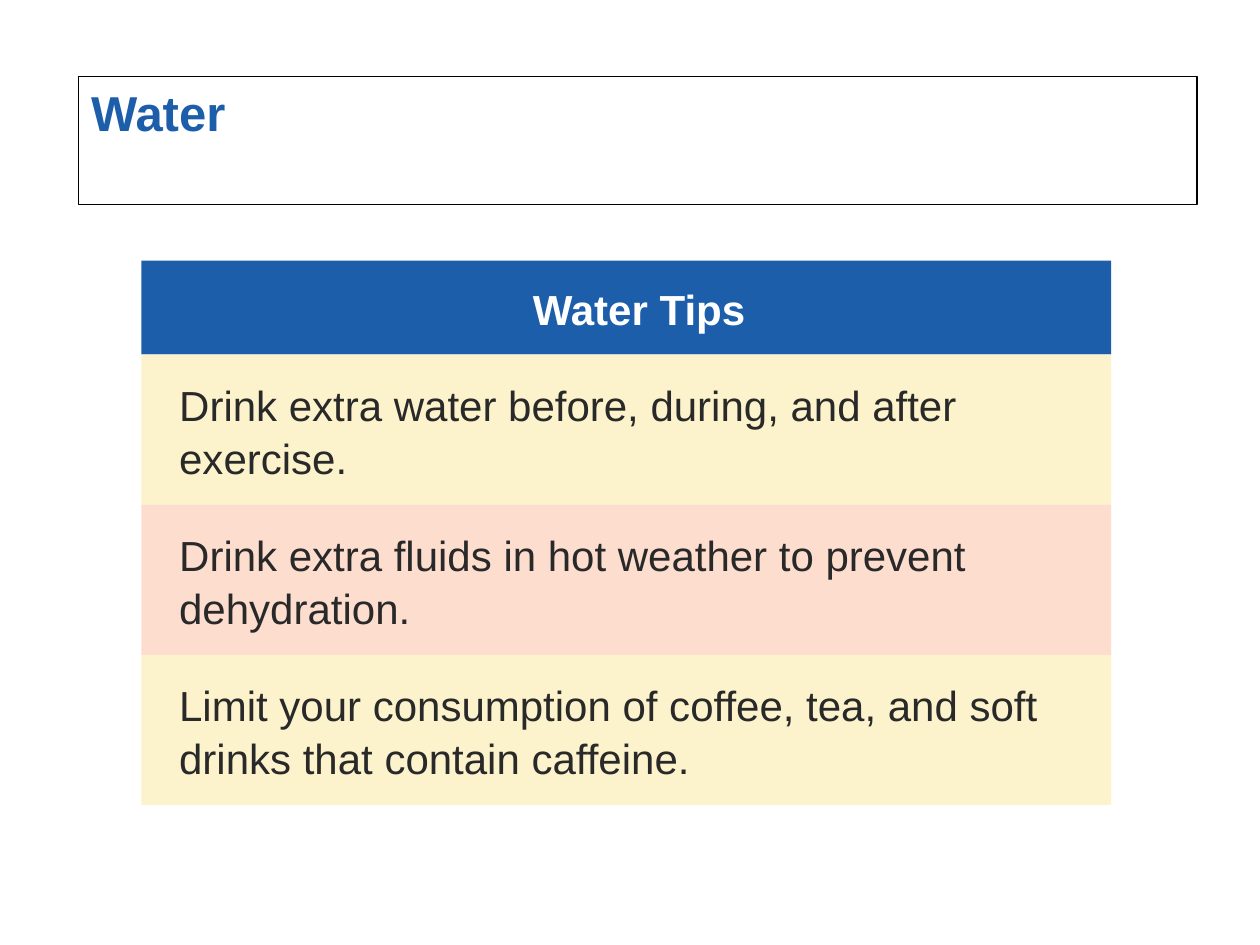
import pptx
import pptx.dml.color
import pptx.enum.shapes
import pptx.enum.text
import pptx.util

Pt = pptx.util.Pt
ALIGN = pptx.enum.text.PP_ALIGN
ANCHOR = pptx.enum.text.MSO_ANCHOR

COLORS = {
    "blue": "1D5EAB",
    "cream": "FCF3CC",
    "pink": "FDDDCE",
    "ink": "292929",
    "white": "FFFFFF",
    "black": "000000",
}
TIPS = [
    "Drink extra water before, during, and after exercise.",
    "Drink extra fluids in hot weather to prevent dehydration.",
    "Limit your consumption of coffee, tea, and soft drinks that contain caffeine.",
]


def color(name):
    """Return the named colour."""
    return pptx.dml.color.RGBColor.from_string(COLORS[name])


def add_panel(slide, box, fill, text, size, ink, bold=False, align=ALIGN.LEFT):
    """Add a filled rectangle with one run of text."""
    panel = slide.shapes.add_shape(
        pptx.enum.shapes.MSO_SHAPE.RECTANGLE, *(Pt(length) for length in box))
    panel.shadow.inherit = False
    panel.fill.solid()
    panel.fill.fore_color.rgb = color(fill)
    panel.line.fill.background()
    panel.text_frame.word_wrap = True
    para = panel.text_frame.paragraphs[0]
    para.alignment = align
    span = para.add_run()
    span.text = text
    span.font.name = "Arial"
    span.font.size = Pt(size)
    span.font.bold = bold
    span.font.color.rgb = color(ink)
    return panel


def add_title(slide, box):
    """Add the outlined slide title."""
    title = add_panel(slide, box, "white", "Water", 28, "blue", bold=True)
    title.text_frame.vertical_anchor = ANCHOR.TOP
    title.line.color.rgb = color("black")
    title.line.width = Pt(0.75)


def add_tips(slide, box, header_height=53.7):
    """Stack the header band and the equal tip bands inside the box."""
    left, top, width, height = box
    row_height = (height - header_height) / len(TIPS)
    bands = [add_panel(slide, (left, top, width, header_height), "blue",
                       "Water Tips", 24, "white", True, ALIGN.CENTER)]
    for index, tip in enumerate(TIPS):
        row_top = top + header_height + index * row_height
        fill = ("cream", "pink")[index % 2]
        bands.append(add_panel(slide, (left, row_top, width, row_height),
                               fill, tip, 24, "ink"))
    for band in bands:
        frame = band.text_frame
        frame.vertical_anchor = ANCHOR.MIDDLE
        frame.margin_left = Pt(21.6)
        frame.paragraphs[0].line_spacing = 1.05


def main():
    """Build and save the deck."""
    deck = pptx.Presentation()
    deck.slide_width, deck.slide_height = Pt(720), Pt(540)
    slide = deck.slides.add_slide(deck.slide_layouts[6])
    add_title(slide, (45, 43.75, 639, 73.25))
    add_tips(slide, (80.8, 148.9, 554.2, 311.1))
    deck.save("out.pptx")


if __name__ == "__main__":
    main()
